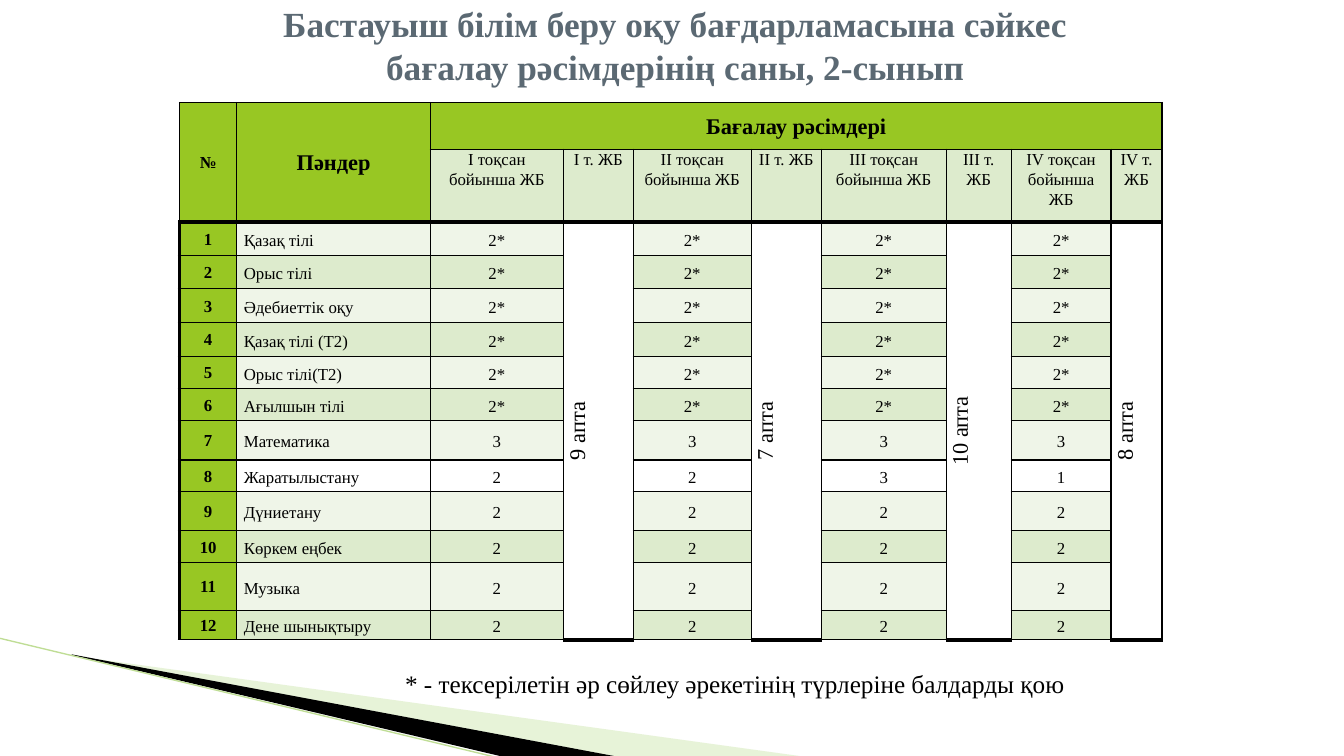
from lxml.etree import SubElement
from pptx import Presentation
from pptx.dml.color import RGBColor
from pptx.enum.shapes import MSO_CONNECTOR
from pptx.enum.text import MSO_ANCHOR, PP_ALIGN
from pptx.oxml.ns import qn
from pptx.util import Pt

FONT = "Times New Roman"
HUE = {"head": "98C723", "light": "EFF5E8", "band": "DDEBCD", "white": "FFFFFF",
       "black": "000000", "title": "5B6973", "leaf": "C5E19F", "line": "BFDD95"}

TITLE = "Бастауыш білім беру оқу бағдарламасына сәйкес бағалау рәсімдерінің саны, 2-сынып"
NOTE = "* - тексерілетін әр сөйлеу әрекетінің түрлеріне балдарды қою"
HEADS = ["№", "Пәндер", "Бағалау рәсімдері"]
TERMS = [("I", "9 апта"), ("II", "7 апта"), ("III", "10 апта"), ("IV", "8 апта")]
MARKS = [
    ("Қазақ тілі", ["2*"] * 4),
    ("Орыс тілі", ["2*"] * 4),
    ("Әдебиеттік оқу", ["2*"] * 4),
    ("Қазақ тілі (Т2)", ["2*"] * 4),
    ("Орыс тілі(Т2)", ["2*"] * 4),
    ("Ағылшын тілі", ["2*"] * 4),
    ("Математика", ["3"] * 4),
    ("Жаратылыстану", ["2", "2", "3", "1"]),
    ("Дүниетану", ["2"] * 4),
    ("Көркем еңбек", ["2"] * 4),
    ("Музыка", ["2"] * 4),
    ("Дене шынықтыру", ["2"] * 4),
]
PLAIN = 8  # subject number whose row stays white
COLS = [41, 138.2, 95, 50, 84.3, 50, 89.3, 46.4, 71.4, 36.4]
ROWS = [33.5, 52, 24, 23.5, 24.5, 24, 23, 23, 28, 22.5, 28, 23, 34, 21]
TOP = 2  # header rows
WEEKS = range(3, len(COLS), 2)
LEAVES = [
    ("leaf", 40, [(52.6, 468.5), (571, 540), (437.8, 540), (52.6, 468)]),
    ("black", 100, [(51.1, 467.4), (438.5, 540), (357.1, 540), (51.8, 468)]),
]

HEAD = {"margin_left": Pt(4.3), "margin_right": Pt(4.3), "margin_top": 0,
        "margin_bottom": 0, "vertical_anchor": MSO_ANCHOR.MIDDLE}
TERM = {**HEAD, "vertical_anchor": MSO_ANCHOR.TOP}
BODY = {**HEAD, "margin_left": Pt(5), "margin_right": Pt(5), "margin_top": Pt(0.7)}


def rgb(name):
    return RGBColor.from_string(HUE[name])


def put(item, values):
    for name, value in values.items():
        setattr(item, name, value)


def write(frame, text, size, bold=False, hue="black", align=PP_ALIGN.CENTER, gap=1.0):
    para = frame.paragraphs[0]
    para.text = text
    put(para, {"alignment": align, "line_spacing": gap})
    put(para.font, {"name": FONT, "size": Pt(size), "bold": bold})
    para.font.color.rgb = rgb(hue)


def add_leaf(slide, hue, alpha, points):
    build = slide.shapes.build_freeform(Pt(points[0][0]), Pt(points[0][1]))
    build.add_line_segments([(Pt(x), Pt(y)) for x, y in points[1:]])
    leaf = build.convert_to_shape()
    leaf.shadow.inherit = False
    leaf.fill.solid()
    leaf.fill.fore_color.rgb = rgb(hue)
    leaf.line.fill.background()
    if alpha < 100:
        tint = leaf.element.spPr.find(".//" + qn("a:srgbClr"))
        SubElement(tint, qn("a:alpha"), val=str(alpha * 1000))


def add_box(slide, left, top, width, height, values):
    frame = slide.shapes.add_textbox(Pt(left), Pt(top), Pt(width), Pt(height)).text_frame
    put(frame, {"word_wrap": True, **values})
    return frame


def rule(edge, col):
    """Width of the horizontal rule above row number edge."""
    if edge == TOP or (edge == len(ROWS) and col in WEEKS):
        return 3
    return 0.5 if edge == 11 and col not in WEEKS else 1


def border(cell, row, col):
    end = row + (cell.span_height if cell.is_merge_origin else 1)
    sides = {"L": 3 if col == 0 and row >= TOP else 1, "R": 1,
             "T": rule(row, col), "B": rule(end, col)}
    props = cell._tc.get_or_add_tcPr()
    for side, width in sides.items():
        line = SubElement(props, qn("a:ln" + side), w=str(Pt(width)))
        SubElement(SubElement(line, qn("a:solidFill")), qn("a:srgbClr"), val=HUE["black"])


def shade(row, col):
    if col in WEEKS and row >= TOP:
        return "white"
    if row == 0 or col == 0 or (row < TOP and col == 1):
        return "head"
    if row < TOP:
        return "band"
    if row - TOP + 1 == PLAIN:
        return "white"
    return "light" if row % 2 == 0 else "band"


def fill_cell(table, row, col, text, values, size=12, gap=1.07, **style):
    cell = table.cell(row, col)
    put(cell, values)
    write(cell.text_frame, text, size, gap=gap, **style)


def add_grid(slide):
    table = slide.shapes.add_table(len(ROWS), len(COLS), Pt(128.2), Pt(73.2),
                                   Pt(sum(COLS)), Pt(sum(ROWS))).table
    put(table, {"first_row": False, "horz_banding": False})
    for col, width in zip(table.columns, COLS):
        col.width = Pt(width)
    for row, height in zip(table.rows, ROWS):
        row.height = Pt(height)

    last = len(ROWS) - 1
    spans = [(0, 0, 1, 0), (0, 1, 1, 1), (0, 2, 0, len(COLS) - 1)]
    spans += [(TOP, col, last, col) for col in WEEKS]
    for top, left, low, right in spans:
        table.cell(top, left).merge(table.cell(low, right))
    for row in range(len(ROWS)):
        for col in range(len(COLS)):
            cell = table.cell(row, col)
            border(cell, row, col)
            cell.fill.solid()
            cell.fill.fore_color.rgb = rgb(shade(row, col))

    for col, (text, size) in enumerate(zip(HEADS, (12, 16, 16))):
        fill_cell(table, 0, col, text, HEAD, size, bold=True)
    for col, (term, weeks) in zip(WEEKS, TERMS):
        fill_cell(table, 1, col - 1, f"{term} тоқсан бойынша ЖБ", TERM)
        fill_cell(table, 1, col, f"{term} т. ЖБ", TERM)
        fill_cell(table, TOP, col, weeks, HEAD, 16)
        table.cell(TOP, col)._tc.get_or_add_tcPr().set("vert", "vert270")
    for row, (name, marks) in enumerate(MARKS, TOP):
        fill_cell(table, row, 0, str(row - TOP + 1), HEAD, bold=True)
        fill_cell(table, row, 1, name, BODY, gap=1.15, align=PP_ALIGN.LEFT)
        for col, mark in zip(WEEKS, marks):
            fill_cell(table, row, col - 1, mark, BODY, gap=1.15)


def main():
    deck = Presentation()
    put(deck, {"slide_width": Pt(960), "slide_height": Pt(540)})
    slide = deck.slides.add_slide(deck.slide_layouts[6])

    for leaf in LEAVES:
        add_leaf(slide, *leaf)
    stem = slide.shapes.add_connector(MSO_CONNECTOR.STRAIGHT, Pt(-0.7), Pt(455.8),
                                      Pt(356.4), Pt(541.4))
    stem.line.color.rgb = rgb("line")
    stem.line.width = Pt(0.95)
    SubElement(stem.element.spPr, qn("a:effectLst"))

    note = add_box(slide, 264.2, 473.8, 566.6, 28.8, {"margin_left": Pt(25.2)})
    write(note, NOTE, 18, align=PP_ALIGN.LEFT)
    title = add_box(slide, 172, 3.6, 620.6, 56.9, {"vertical_anchor": MSO_ANCHOR.MIDDLE})
    write(title, TITLE, 25.2, bold=True, hue="title")
    add_grid(slide)
    deck.save("out.pptx")


if __name__ == "__main__":
    main()
